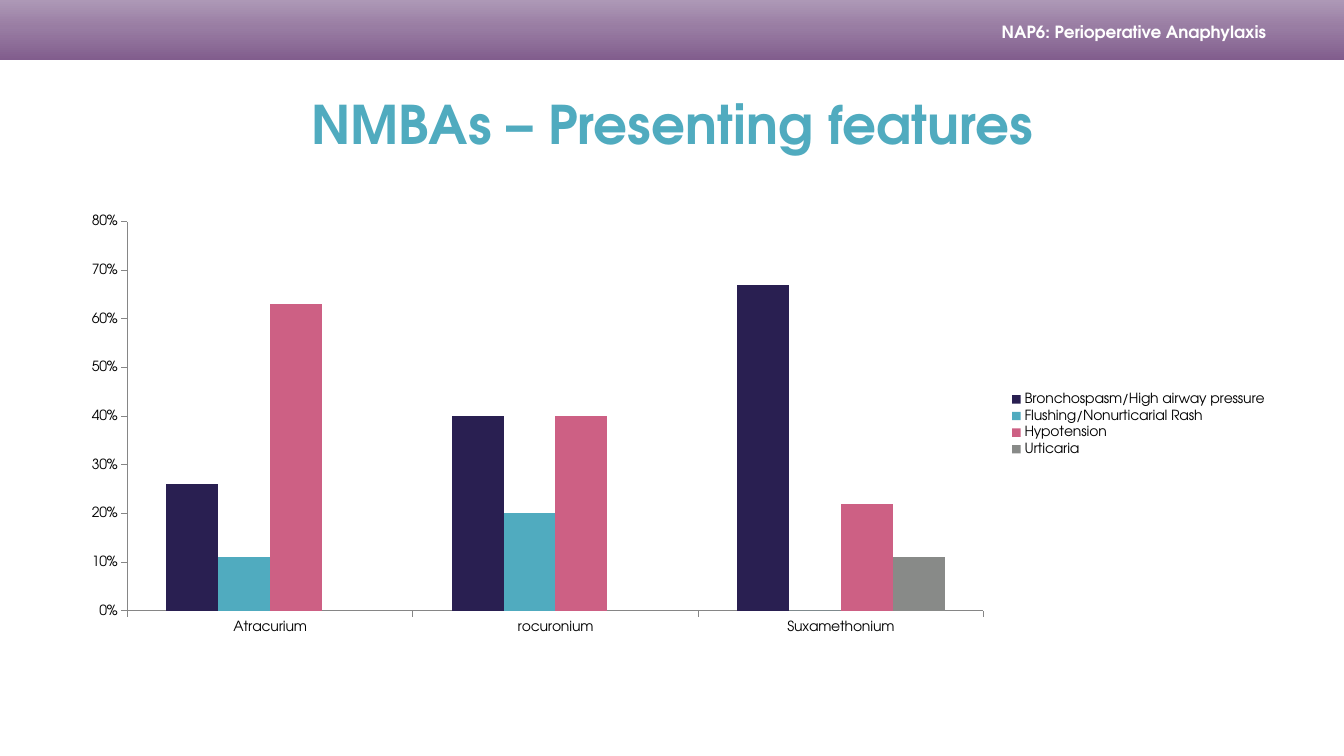
from copy import deepcopy
from pptx import Presentation
from pptx.chart.data import CategoryChartData
from pptx.dml.color import RGBColor
from pptx.enum.chart import XL_CHART_TYPE, XL_LEGEND_POSITION, XL_TICK_MARK
from pptx.enum.shapes import MSO_SHAPE
from pptx.enum.text import MSO_ANCHOR, PP_ALIGN
from pptx.oxml.ns import qn
from pptx.util import Inches, Pt

FACE = "TeX Gyre Adventor"
TITLE = "NMBAs – Presenting features"
BANNER = "NAP6: Perioperative Anaphylaxis"
FADE = [(0, "815D8D"), (0.55, "997DA3"), (1, "AD98B6")]
DRUGS = ["Atracurium", "rocuronium", "Suxamethonium"]
SIGNS = [
    ("Bronchospasm/High airway pressure", "291F51", (0.26, 0.4, 0.67)),
    ("Flushing/Nonurticarial Rash", "50ABBF", (0.11, 0.2, 0)),
    ("Hypotension", "CD6084", (0.63, 0.4, 0.22)),
    ("Urticaria", "888A88", (0, 0, 0.11)),
]


def paint(color, tint):
    color.rgb = RGBColor.from_string(tint)


def style(font, size, tint, bold=False):
    font.name, font.size, font.bold = FACE, Pt(size), bold
    paint(font.color, tint)


def write(shape, text, size, tint, align):
    frame = shape.text_frame
    frame.text = text
    frame.word_wrap = True
    frame.vertical_anchor = MSO_ANCHOR.MIDDLE
    line = frame.paragraphs[0]
    line.alignment = align
    style(line.runs[0].font, size, tint, True)


def place(shape, *box):
    shape.left, shape.top, shape.width, shape.height = map(Inches, box)


def add_banner(slide):
    band = slide.shapes.add_shape(
        MSO_SHAPE.RECTANGLE, 0, 0, Inches(13.33), Inches(0.6))
    band.shadow.inherit = False
    band.line.fill.background()
    band.fill.gradient()
    band.fill.gradient_angle = 90
    stops = band._element.spPr.find(".//" + qn("a:gsLst"))
    stops.append(deepcopy(stops[-1]))
    for stop, (spot, tint) in zip(band.fill.gradient_stops, FADE):
        stop.position = spot
        paint(stop.color, tint)
    label = slide.shapes.add_textbox(*map(Inches, (8.35, 0.18, 4.45, 0.28)))
    write(label, BANNER, 12, "FFFFFF", PP_ALIGN.RIGHT)
    label.text_frame.margin_right = Inches(0.24)


def add_bars(slide):
    data = CategoryChartData(number_format="0%")
    data.categories = DRUGS
    for name, tint, values in SIGNS:
        data.add_series(name, values)
    chart = slide.shapes.add_chart(
        XL_CHART_TYPE.COLUMN_CLUSTERED,
        *map(Inches, (0.67, 2.05, 12, 4.32)), data).chart
    style(chart.font, 10, "000000")
    chart.has_title = False
    chart.has_legend = True
    chart.legend.position = XL_LEGEND_POSITION.RIGHT
    chart.legend.include_in_layout = False
    plot = chart.plots[0]
    plot.gap_width, plot.overlap = 150, 0
    plot.vary_by_categories = False
    for bar, (name, tint, values) in zip(plot.series, SIGNS):
        bar.format.fill.solid()
        paint(bar.format.fill.fore_color, tint)
    for axis in (chart.category_axis, chart.value_axis):
        axis.has_major_gridlines = False
        axis.major_tick_mark = XL_TICK_MARK.OUTSIDE
        axis.minor_tick_mark = XL_TICK_MARK.NONE
        axis.format.line.width = Pt(0.75)
        paint(axis.format.line.color, "868686")
    scale = chart.value_axis
    scale.minimum_scale, scale.maximum_scale, scale.major_unit = 0, 0.8, 0.1
    scale.tick_labels.number_format = "0%"
    scale.tick_labels.number_format_is_linked = False


def main():
    deck = Presentation()
    deck.slide_width, deck.slide_height = Inches(13.33), Inches(7.5)
    slide = deck.slides.add_slide(deck.slide_layouts[5])
    add_banner(slide)
    title = slide.shapes.title
    place(title, 0.67, 0.6, 12, 1.25)
    write(title, TITLE, 38, "50ABBF", PP_ALIGN.CENTER)
    add_bars(slide)
    deck.save("out.pptx")


if __name__ == "__main__":
    main()
